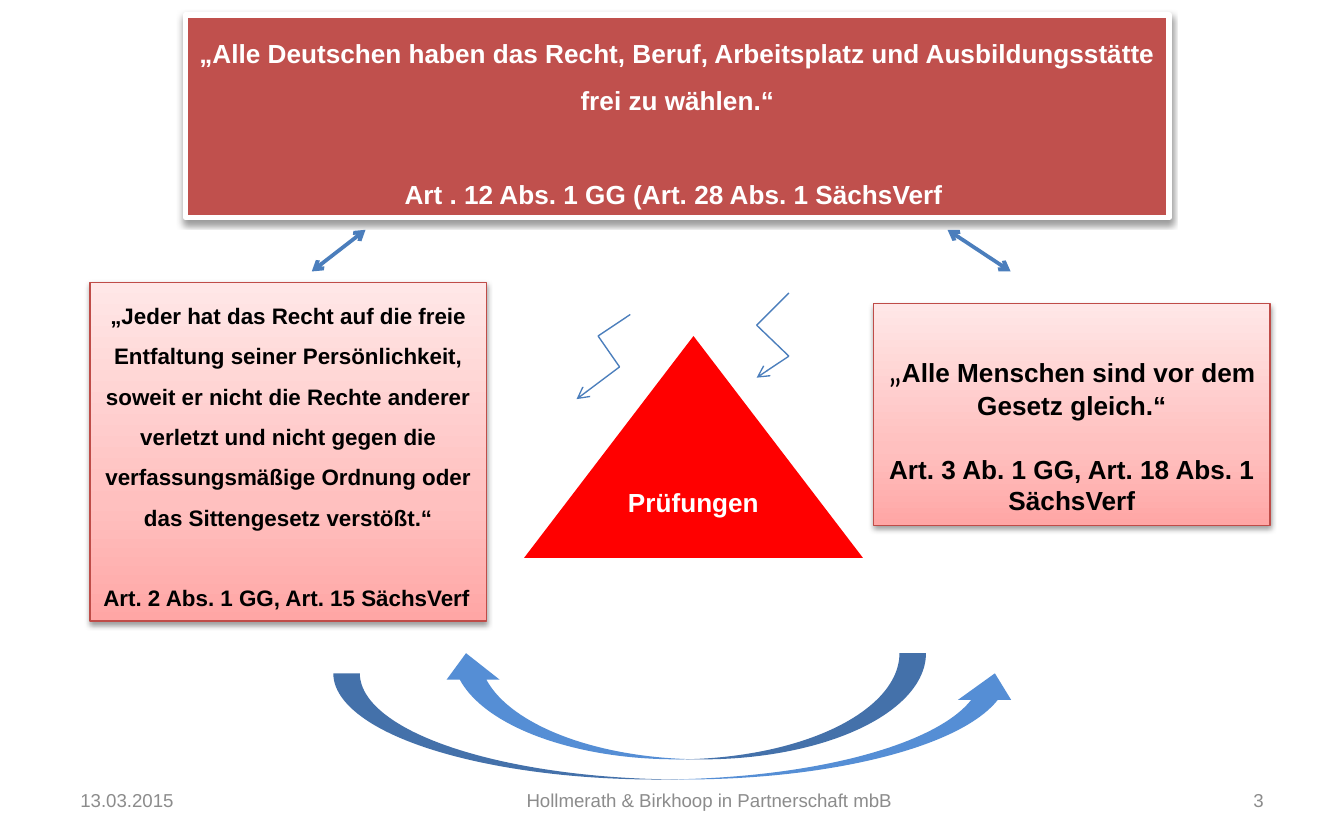
"""Build the slide on fundamental rights around examinations."""
from copy import deepcopy
from dataclasses import dataclass

from lxml.etree import SubElement
from pptx import Presentation
from pptx.dml.color import RGBColor
from pptx.enum.shapes import MSO_CONNECTOR as CONN, MSO_SHAPE as SHAPE
from pptx.enum.text import MSO_ANCHOR as ANCHOR, PP_ALIGN as ALIGN
from pptx.oxml.ns import qn
from pptx.util import Inches, Pt


@dataclass(frozen=True)
class Theme:
    """Colours, fonts and type sizes of the slide."""
    font: str = "Arial"
    quote_font: str = "Calibri"
    white: str = "FFFFFF"
    black: str = "000000"
    red: str = "C0504D"
    border: str = "BF4C48"
    pinks: tuple = ((0, "FFA6A5"), (0.35, "FFC0BF"), (1, "FFE7E7"))
    alarm: str = "FF0000"
    line: str = "4B7EBC"
    arrow: str = "558ED5"
    grey: str = "8C8C8C"
    quote: int = 18
    body: int = 14
    small: int = 12
    footer: int = 10


T = Theme()


def rgb(value):
    """Turn a hex string into a colour."""
    return RGBColor.from_string(value)


def style(p, size, color, bold=True, align=ALIGN.CENTER):
    """Set font and alignment of a paragraph."""
    p.alignment = align
    f = p.font
    f.name, f.size, f.bold = T.font, Pt(size), bold
    f.color.rgb = rgb(color)


def add_shape(s, kind, box, fill=None):
    """Add a preset shape without outline or shadow."""
    sp = s.shapes.add_shape(kind, *map(Inches, box))
    sp.shadow.inherit = False
    sp.line.fill.background()
    if fill:
        sp.fill.solid()
        sp.fill.fore_color.rgb = rgb(fill)
    return sp


def add_shadow(sp):
    """Give a shape a soft shadow below it."""
    effects = sp._element.spPr.find(qn("a:effectLst"))
    shadow = SubElement(effects, qn("a:outerShdw"), blurRad=str(Pt(3.1)),
                        dist=str(Pt(1.6)), dir="5400000", rotWithShape="0")
    color = SubElement(shadow, qn("a:srgbClr"), val=T.black)
    SubElement(color, qn("a:alpha"), val="38000")


def fill_gradient(sp):
    """Fill a shape with the pink gradient, darkest at the bottom."""
    sp.fill.gradient()
    sp.fill.gradient_angle = 90
    stops = sp._element.spPr.find(".//" + qn("a:gsLst"))
    stops.append(deepcopy(stops[-1]))
    for stop, (position, color) in zip(sp.fill.gradient_stops, T.pinks):
        stop.position = position
        stop.color.rgb = rgb(color)


def add_law_box(s, box, texts, size, pitch, color=T.black, fill=None,
                line=(T.border, 0.75), top=0.05):
    """Add a box with a quoted article and its reference one line below."""
    sp = add_shape(s, SHAPE.RECTANGLE, box, fill)
    if not fill:
        fill_gradient(sp)
    sp.line.color.rgb, sp.line.width = rgb(line[0]), Pt(line[1])
    add_shadow(sp)
    tf = sp.text_frame
    tf.word_wrap = True
    tf.vertical_anchor = ANCHOR.TOP
    tf.margin_top = Inches(top)
    tf.text = "\n".join(texts)
    for p in tf.paragraphs:
        style(p, size, color)
        p.line_spacing = Pt(pitch)
    tf.paragraphs[-1].space_before = Pt(pitch)
    return tf


def add_line(s, start, end, width=0.75, ends=()):
    """Add a line with open arrowheads at the named ends."""
    c = s.shapes.add_connector(CONN.STRAIGHT, *map(Inches, start + end))
    c.line.color.rgb, c.line.width = rgb(T.line), Pt(width)
    ln = c.line._get_or_add_ln()
    for end_name in ends:
        SubElement(ln, qn(f"a:{end_name}"), type="arrow")
    SubElement(c._element.spPr, qn("a:effectLst"))


def add_bolt(s, points):
    """Add a zigzag of lines with an arrowhead at its last point."""
    for i, (start, end) in enumerate(zip(points, points[1:]), 2):
        add_line(s, start, end, ends=("tailEnd",) if i == len(points) else ())


def add_footer(s, left, width, text, align):
    """Add one text of the footer row."""
    tb = s.shapes.add_textbox(*map(Inches, (left, 5.79, width, 0.33)))
    tf = tb.text_frame
    tf.word_wrap = True
    tf.vertical_anchor = ANCHOR.MIDDLE
    tf.text = text
    style(tf.paragraphs[0], T.footer, T.grey, False, align)


def add_curved_arrow(s, box, flip=False):
    """Add a curved arrow, mirrored if asked."""
    sp = add_shape(s, SHAPE.CURVED_UP_ARROW, box, T.arrow)
    if flip:
        sp._element.spPr.xfrm.set("flipH", "1")


def add_laws(s):
    """Add the three boxes with articles of law."""
    add_law_box(s, (1.38, 0.11, 7.32, 1.51), (
        "„Alle Deutschen haben das Recht, Beruf, Arbeitsplatz und "
        "Ausbildungsstätte frei zu wählen.“",
        "Art . 12 Abs. 1 GG (Art. 28 Abs. 1 SächsVerf "),
        T.body, 25.2, T.white, T.red, (T.white, 3))
    tf = add_law_box(s, (0.67, 2.1, 2.95, 2.52), (
        "„Jeder hat das Recht auf die freie Entfaltung seiner "
        "Persönlichkeit, soweit er nicht die Rechte anderer verletzt und "
        "nicht gegen die verfassungsmäßige Ordnung oder das Sittengesetz "
        "verstößt.“",
        "Art. 2 Abs. 1 GG, Art. 15 SächsVerf"), T.small, 21.6)
    tf.paragraphs[-1].alignment = ALIGN.LEFT
    tf = add_law_box(s, (6.5, 2.26, 2.95, 1.65), (
        "„", "Art. 3 Ab. 1 GG, Art. 18 Abs. 1 SächsVerf"),
        T.body, 17, top=0.4)
    p = tf.paragraphs[0]
    mark = p.runs[0].font
    mark.name, mark.size, mark.bold = T.quote_font, Pt(T.quote), False
    p.add_run().text = "Alle Menschen sind vor dem Gesetz gleich.“"


def main():
    """Build and save the slide."""
    prs = Presentation()
    prs.slide_width, prs.slide_height = Inches(10), Inches(6.25)
    s = prs.slides.add_slide(prs.slide_layouts[6])
    add_laws(s)
    both = ("headEnd", "tailEnd")
    add_line(s, (2.72, 1.71), (2.32, 2.02), 2, both)
    add_line(s, (7.52, 2.02), (7.05, 1.71), 2, both)
    add_curved_arrow(s, (2.48, 5.01, 5.12, 0.79))
    add_curved_arrow(s, (3.27, 4.86, 3.62, 0.79), flip=True)
    sp = add_shape(s, SHAPE.FLOWCHART_EXTRACT, (3.9, 2.5, 2.52, 1.65), T.alarm)
    sp.text_frame.text = "Prüfungen"
    style(sp.text_frame.paragraphs[0], T.body, T.white)
    add_bolt(s, ((4.69, 2.34), (4.45, 2.5), (4.61, 2.73), (4.29, 2.97)))
    add_bolt(s, ((5.87, 2.18), (5.63, 2.42), (5.87, 2.65), (5.63, 2.81)))
    add_footer(s, 0.5, 2.33, "13.03.2015", ALIGN.LEFT)
    add_footer(s, 3.42, 3.71, "Hollmerath & Birkhoop in Partnerschaft mbB",
               ALIGN.CENTER)
    add_footer(s, 7.17, 2.33, "3", ALIGN.RIGHT)
    prs.save("out.pptx")


if __name__ == "__main__":
    main()
